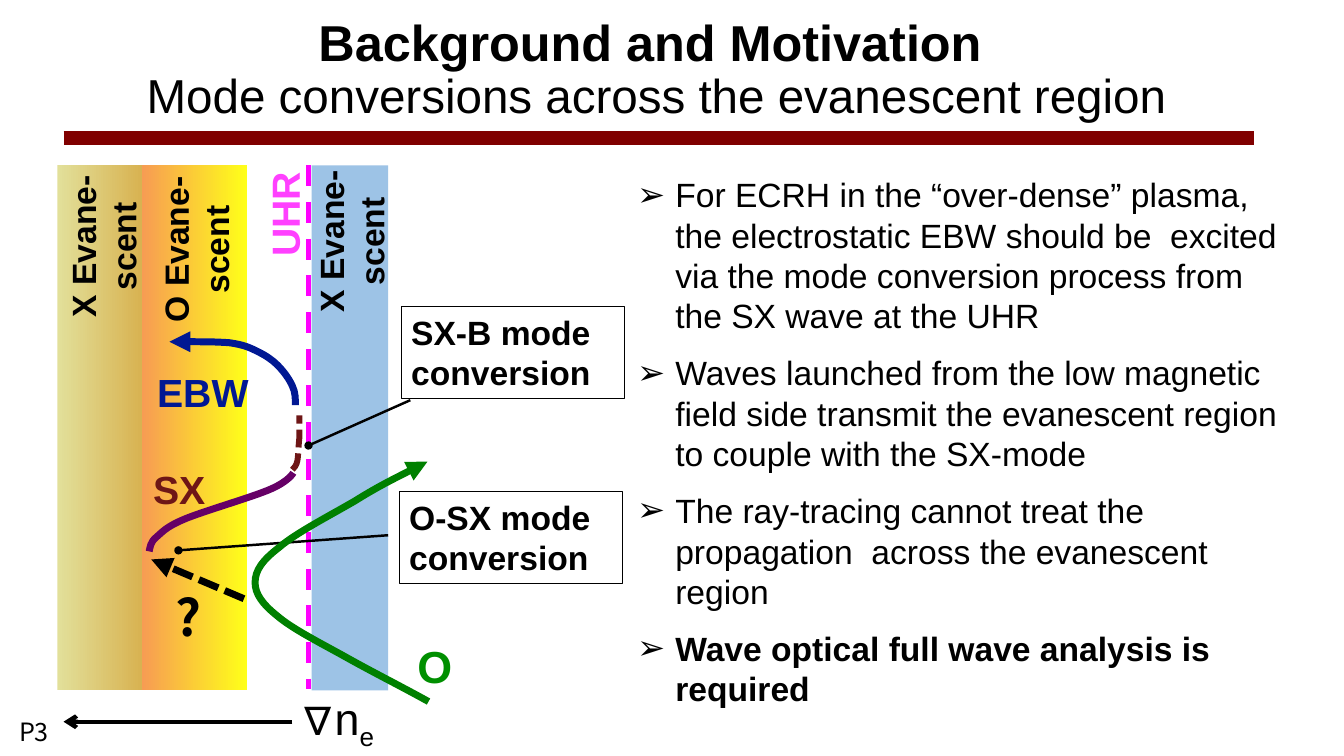
from lxml import etree
from pptx import Presentation
from pptx.dml.color import RGBColor
from pptx.enum.dml import MSO_LINE
from pptx.enum.shapes import MSO_CONNECTOR, MSO_SHAPE
from pptx.enum.text import MSO_ANCHOR, PP_ALIGN
from pptx.oxml.ns import qn
from pptx.util import Inches, Pt

STRAIGHT, RECTANGLE = MSO_CONNECTOR.STRAIGHT, MSO_SHAPE.RECTANGLE
DASH, SHORT_DASH = MSO_LINE.DASH, MSO_LINE.SQUARE_DOT
LEFT, CENTER = PP_ALIGN.LEFT, PP_ALIGN.CENTER
TOP, BOTTOM = MSO_ANCHOR.TOP, MSO_ANCHOR.BOTTOM

BLACK, WHITE = RGBColor(0, 0, 0), RGBColor(255, 255, 255)
MAROON = RGBColor(0x80, 0, 0)
ORANGE, YELLOW = RGBColor(0xF7, 0x9C, 0x53), RGBColor(0xFF, 0xFF, 0x19)
OCHRE, PALE_OLIVE = RGBColor(0xD8, 0xB2, 0x51), RGBColor(0xE2, 0xE0, 0x9A)
LIGHT_BLUE = RGBColor(0x9D, 0xC3, 0xE6)
MAGENTA, PINK = RGBColor(0xFF, 0, 0xFF), RGBColor(0xFF, 0x40, 0xFF)
BROWN, PURPLE = RGBColor(0x6E, 0x16, 0x16), RGBColor(0x66, 0, 0x66)
GREEN, LABEL_GREEN = RGBColor(0, 0x80, 0), RGBColor(0, 0x8F, 0)
NAVY = RGBColor(0x01, 0x18, 0x93)
SANS, CJK = "Arial", "Noto Sans CJK JP"

TITLE = [("Background and Motivation", 36, True), (" ", 34, False),
         ("Mode conversions across the evanescent region", 34, False)]
POINTS = [
    ("For ECRH in the “over-dense” plasma, the electrostatic EBW should be  excited "
     "via the mode conversion process from the SX wave at the UHR", False),
    ("Waves launched from the low magnetic field side transmit the evanescent region "
     "to couple with the SX-mode", False),
    ("The ray-tracing cannot treat the propagation  across the evanescent region", False),
    ("Wave optical full wave analysis is required", True),
]

# left, width, colours from left to right
REGION_TOP, REGION_HEIGHT = 1.64, 5.21
REGIONS = [(0.57, 0.84, [PALE_OLIVE, OCHRE]), (1.41, 1.04, [ORANGE, YELLOW]),
           (3.09, 0.76, [LIGHT_BLUE])]

# start, end, colour, width, dash, arrowhead
LINES = [
    ((0.63, 1.37), (12.44, 1.37), MAROON, 10, None, None),
    ((2.9, 7.16), (0.63, 7.16), BLACK, 3, None, "arrow"),
    ((3.06, 1.64), (3.06, 6.84), MAGENTA, 3.75, DASH, None),
    ((2.42, 5.94), (1.5, 5.55), BLACK, 5, SHORT_DASH, "triangle"),
    ((4.07, 3.97), (3.06, 4.42), BLACK, 1.75, None, "oval"),
    ((3.85, 5.31), (1.77, 5.46), BLACK, 1.75, None, "oval"),
]

# start followed by Bézier triples, colour, width, dash, arrowhead
O_WAVE = [(4.25, 6.96), (3.98, 6.81), (3.7, 6.67), (3.45, 6.53),
          (3.2, 6.39), (2.9, 6.24), (2.75, 6.11), (2.6, 5.99), (2.53, 5.89), (2.53, 5.78),
          (2.53, 5.66), (2.6, 5.56), (2.77, 5.43), (2.93, 5.29), (3.28, 5.11), (3.52, 4.97),
          (3.76, 4.82), (4.24, 4.58), (4.24, 4.58)]
SX_WAVE = [(1.48, 5.47), (1.49, 5.43), (1.49, 5.38), (1.55, 5.33),
           (1.61, 5.28), (1.64, 5.23), (1.83, 5.15), (2.02, 5.07), (2.51, 4.93), (2.69, 4.85),
           (2.87, 4.77), (2.91, 4.69), (2.91, 4.69)]
SX_TO_UHR = [(2.9, 4.66), (2.92, 4.64), (2.94, 4.62), (2.95, 4.57),
             (2.96, 4.51), (2.96, 4.42), (2.97, 4.34), (2.97, 4.27), (2.97, 4.12), (2.97, 4.12)]
EBW_WAVE = [(2.93, 4.02), (2.93, 3.96), (2.93, 3.89), (2.9, 3.83),
            (2.87, 3.76), (2.81, 3.68), (2.75, 3.62), (2.7, 3.57), (2.64, 3.53), (2.56, 3.49),
            (2.48, 3.45), (2.42, 3.42), (2.27, 3.4), (2.12, 3.39), (1.9, 3.39), (1.68, 3.39)]
WAVES = [(O_WAVE, GREEN, 5, None, "triangle"), (SX_WAVE, PURPLE, 5, None, None),
         (SX_TO_UHR, BROWN, 4.25, SHORT_DASH, None), (EBW_WAVE, NAVY, 5, None, "triangle")]

# text, box, size, colour, other format
UPRIGHT = dict(rotation=270, align=CENTER)
LABELS = [
    ("X Evane-scent", (0.15, 1.99, 1.75, 0.91), 24, BLACK, UPRIGHT),
    ("O Evane-scent", (1.08, 2.02, 1.73, 0.91), 24, BLACK, UPRIGHT),
    ("X Evane-scent", (2.61, 1.94, 1.75, 0.91), 24, BLACK, UPRIGHT),
    ("UHR", (2.18, 1.72, 1.28, 0.57), 28, PINK, dict(rotation=270)),
    ("EBW", (1.46, 3.6, 1.28, 0.57), 28, NAVY, {}),
    ("SX", (1.42, 4.57, 0.72, 0.57), 28, BROWN, dict(wrap=False)),
    ("O", (4.04, 6.29, 0.55, 0.64), 32, LABEL_GREEN, dict(wrap=False)),
    ("?", (1.64, 5.77, 0.28, 0.46), 36, BLACK, dict(wrap=False, font=CJK)),
    ("P3", (0.09, 7.06, 0.51, 0.4), 18, BLACK, dict(wrap=False, font=CJK, bold=False)),
]
CALLOUTS = [("SX-B mode conversion", (3.98, 3.04)), ("O-SX mode conversion", (3.96, 4.88))]
CALLOUT_SIZE = (2.21, 0.91)


def inches(values):
    return [Inches(value) for value in values]


def add_run(paragraph, text, size, color=BLACK, bold=False, font=SANS):
    run = paragraph.add_run()
    run.text = text
    for name, value in dict(size=Pt(size), bold=bold, name=font).items():
        setattr(run.font, name, value)
    run.font.color.rgb = color
    for tag in ("a:ea", "a:sym"):
        etree.SubElement(run.font._element, qn(tag), typeface=font)
    return run


def add_label(shapes, text, box, size, color, rotation=0, align=LEFT, wrap=True,
              font=SANS, bold=True):
    label = shapes.add_textbox(*inches(box))
    label.rotation = rotation
    label.text_frame.word_wrap = wrap
    paragraph = label.text_frame.paragraphs[0]
    paragraph.alignment = align
    add_run(paragraph, text, size, color, bold, font)
    return paragraph


def style_line(shape, color, width, dash, head):
    shape.line.color.rgb = color
    shape.line.width = Pt(width)
    if dash:
        shape.line.dash_style = dash
    if head:
        etree.SubElement(shape.line._get_or_add_ln(), qn("a:tailEnd"), type=head)


def add_wave(shapes, points, *style):
    """Draw an open path and turn each three of its segments into one Bézier curve."""
    start, *others = [inches(point) for point in points]
    builder = shapes.build_freeform(*start)
    builder.add_line_segments(others, close=False)
    wave = builder.convert_to_shape()
    outline = wave._element.find(".//" + qn("a:path"))
    segments = outline.findall(qn("a:lnTo"))
    for first in range(0, len(segments), 3):
        curve = etree.SubElement(outline, qn("a:cubicBezTo"))
        for segment in segments[first:first + 3]:
            curve.append(segment[0])
            outline.remove(segment)
    wave.fill.background()
    wave.shadow.inherit = False
    style_line(wave, *style)


def add_rectangle(shapes, box, colors):
    rectangle = shapes.add_shape(RECTANGLE, *inches(box))
    rectangle.shadow.inherit = False
    rectangle.line.fill.background()
    if len(colors) == 1:
        rectangle.fill.solid()
        rectangle.fill.fore_color.rgb = colors[0]
    else:
        rectangle.fill.gradient()
        rectangle.fill.gradient_angle = 0
        for stop, color in zip(rectangle.fill.gradient_stops, colors):
            stop.color.rgb = color
    return rectangle


def main():
    deck = Presentation()
    deck.slide_width, deck.slide_height = Inches(13.33), Inches(7.5)
    slide = deck.slides.add_slide(deck.slide_layouts[5])
    shapes = slide.shapes

    title = shapes.title
    title.left, title.top, title.width, title.height = inches((0.61, 0.21, 11.81, 1.07))
    title.text_frame.vertical_anchor = BOTTOM
    heading = title.text_frame.paragraphs[0]
    for name, value in dict(alignment=CENTER, line_spacing=0.9, space_before=Pt(12)).items():
        setattr(heading, name, value)
    for index, (text, size, bold) in enumerate(TITLE):
        if index == 2:
            heading.add_line_break()
        add_run(heading, text, size, bold=bold)

    body = shapes.add_textbox(*inches((6.22, 1.68, 6.66, 5.45))).text_frame
    body.word_wrap = True
    for index, (text, bold) in enumerate(POINTS):
        point = body.add_paragraph() if index else body.paragraphs[0]
        point.space_before = Pt(12)
        properties = point._p.get_or_add_pPr()
        properties.set("marL", str(Inches(0.38)))
        properties.set("indent", str(-Inches(0.38)))
        etree.SubElement(properties, qn("a:buFont"), typeface=SANS)
        etree.SubElement(properties, qn("a:buChar"), char="➢")
        add_run(point, text, 24, bold=bold)

    for left, width, colors in REGIONS:
        add_rectangle(shapes, (left, REGION_TOP, width, REGION_HEIGHT), colors)
    for start, end, *style in LINES:
        line = shapes.add_connector(STRAIGHT, *inches(start + end))
        style_line(line, *style)
        etree.SubElement(line._element.spPr, qn("a:effectLst"))
    for points, *style in WAVES:
        add_wave(shapes, points, *style)
    for text, corner in CALLOUTS:
        callout = add_rectangle(shapes, corner + CALLOUT_SIZE, [WHITE])
        style_line(callout, BLACK, 0.75, None, None)
        callout.text_frame.vertical_anchor = TOP
        callout.text_frame.paragraphs[0].alignment = LEFT
        add_run(callout.text_frame.paragraphs[0], text, 24, bold=True)
    for text, box, size, color, extra in LABELS:
        add_label(shapes, text, box, size, color, **extra)
    gradient = add_label(shapes, "∇n", (2.89, 6.8, 1.07, 0.64), 32, BLACK,
                         wrap=False, bold=False)
    add_run(gradient, "e", 32).font._element.set("baseline", "-25000")

    deck.save("out.pptx")


if __name__ == "__main__":
    main()
